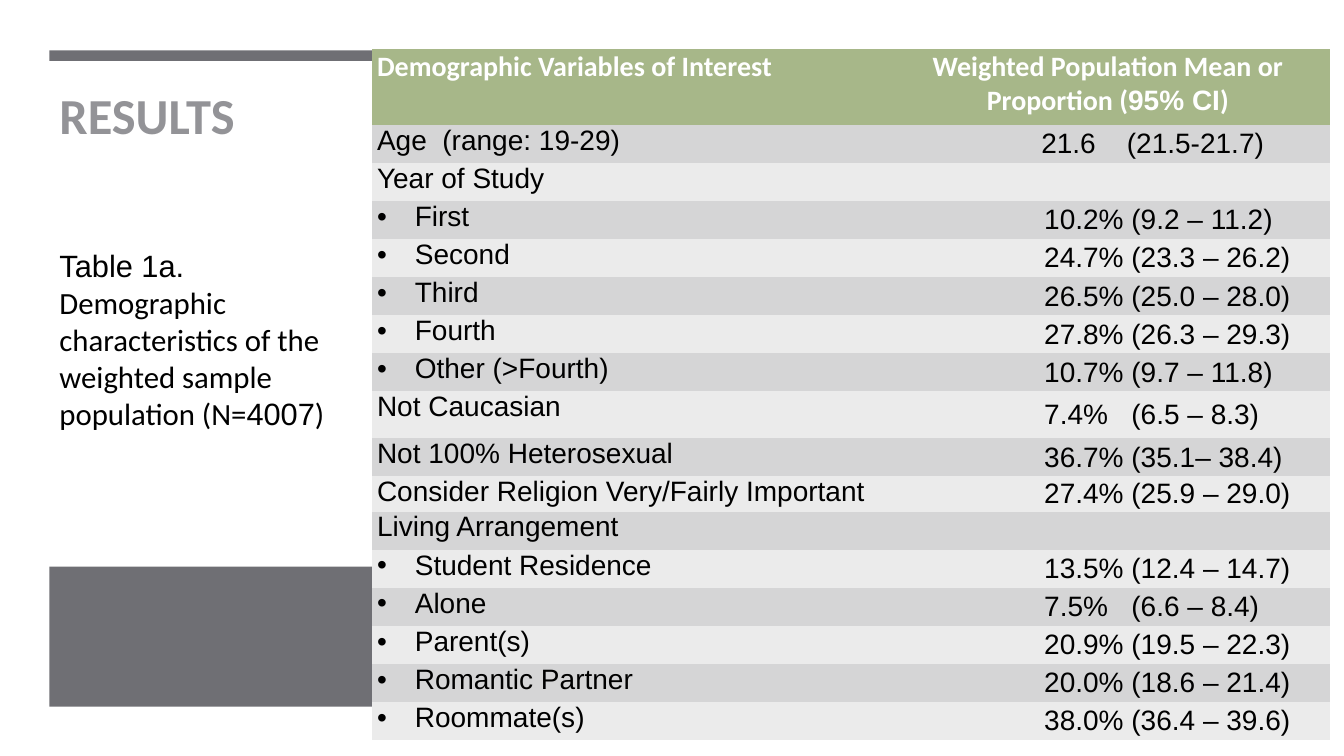
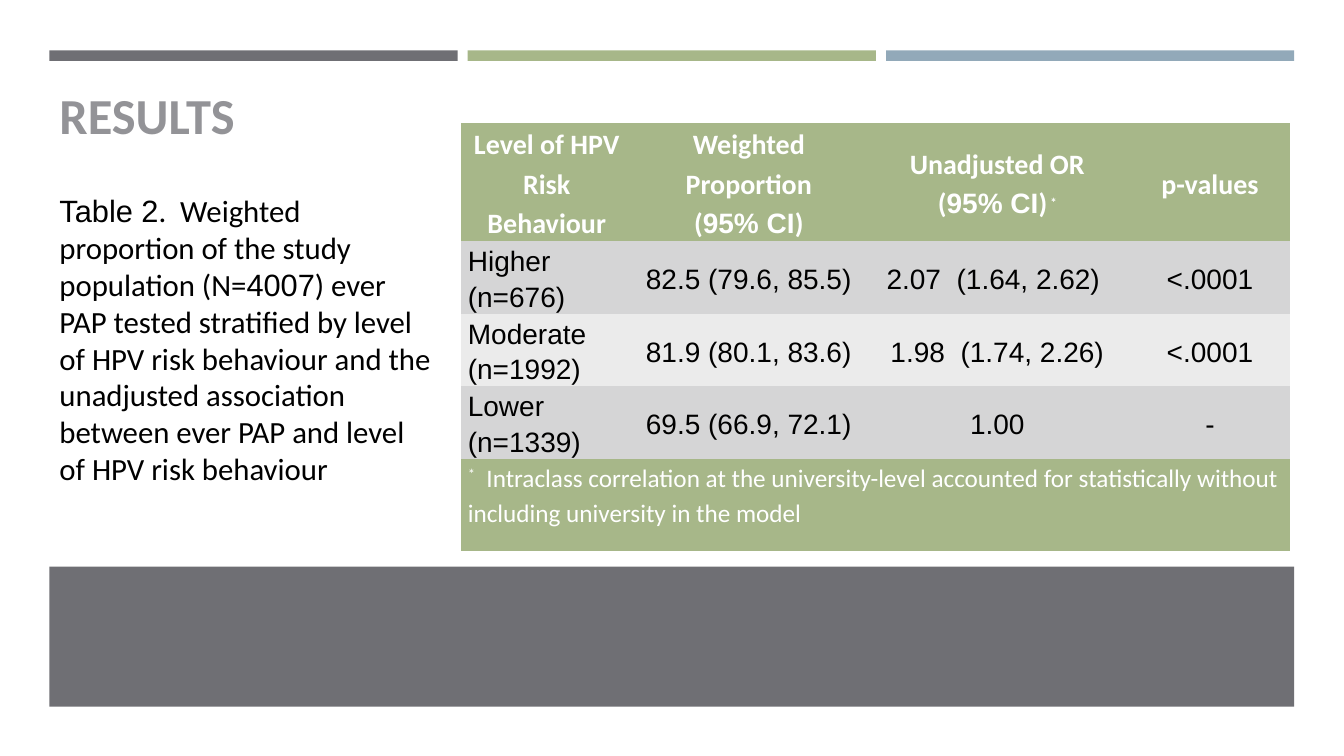
from itertools import cycle

from lxml.etree import SubElement
from pptx import Presentation
from pptx.dml.color import RGBColor
from pptx.enum.shapes import MSO_SHAPE
from pptx.enum.text import MSO_ANCHOR, MSO_AUTO_SIZE, PP_ALIGN
from pptx.oxml.ns import qn
from pptx.util import Pt

COLORS = {
    "grey": "6F6F74", "green": "A7B789", "blue": "92A9B9", "title": "939397",
    "white": "FFFFFF", "black": "000000", "dark_row": "D5D5D6", "light_row": "EBEBEB",
}
SANS, PLAIN = "Calibri", "Arial"
NO_GRID = "{2D5ABB26-0587-4C30-8999-92F81FD0307C}"
LEFT, BAND_TOP, BAND_W, BAND_STEP, BAND_H = 35.3, 36, 291.6, 298.8, 7.5


def write(p, text, size=20, font=PLAIN, color="black", bold=False, raised=False):
    """Append text to a paragraph, swapping between the two fonts at each bar."""
    fonts = cycle((font, SANS if font == PLAIN else PLAIN))
    for part, name in zip(text.split("|"), fonts):
        r = p.add_run()
        r.text = part
        r.font.size, r.font.name, r.font.bold = Pt(size), name, bold
        r.font.color.rgb = RGBColor.from_string(COLORS[color])
        if raised:
            r.font._element.set("baseline", "30000")


class Deck:
    """Hold the presentation, its shared style and the current slide."""

    def __init__(self):
        """Set the page size and prepare the shared layout."""
        self.prs = Presentation()
        self.prs.slide_width, self.prs.slide_height = Pt(960), Pt(540)
        self.layout = self.prs.slide_layouts[7]
        self.slide = None

    def add_slide(self):
        """Start a slide that keeps only the title and text placeholders."""
        first = self.slide is None
        self.slide = self.prs.slides.add_slide(self.layout)
        unused = self.slide.placeholders[1]._element
        unused.getparent().remove(unused)
        if first:
            for i, name in enumerate(("grey", "green", "blue")):
                self.layout_band(i, LEFT + i * BAND_STEP, BAND_TOP, BAND_W, BAND_H, name)
            self.layout_band(3, LEFT, 404.8, 2 * BAND_STEP + BAND_W, 100, "grey")

    def layout_band(self, index, x, y, w, h, color):
        """Draw a plain rectangle and move it to the back of the layout."""
        sp = self.slide.shapes.add_shape(MSO_SHAPE.RECTANGLE, Pt(x), Pt(y), Pt(w), Pt(h))
        sp.shadow.inherit = False
        sp.fill.solid()
        sp.fill.fore_color.rgb = RGBColor.from_string(COLORS[color])
        sp.line.fill.background()
        sp._element.nvSpPr.cNvPr.set("id", str(100 + index))
        self.layout.shapes._spTree.insert(2 + index, sp._element)

    def placeholder(self, sp, text, y, w, h, **fmt):
        """Move a placeholder, fill it and return its text frame and paragraph."""
        sp.left, sp.top, sp.width, sp.height = Pt(LEFT), Pt(y), Pt(w), Pt(h)
        tf = sp.text_frame
        tf.auto_size, tf.vertical_anchor = MSO_AUTO_SIZE.NONE, MSO_ANCHOR.MIDDLE
        write(tf.paragraphs[0], text, **fmt)
        return tf, tf.paragraphs[0]

    def title(self, text, width):
        """Write the slide title."""
        self.placeholder(self.slide.shapes.title, text, 49, width, 65,
                         size=36, font=SANS, color="title", bold=True)

    def caption(self, text, width):
        """Write the table caption in the text placeholder."""
        tf, p = self.placeholder(self.slide.placeholders[2], text, 103, width, 300, size=22)
        tf.margin_bottom = Pt(25)
        p.space_after = Pt(6)

    def table(self, x, y, widths, heights):
        """Add an unstyled table with the given column widths and row heights."""
        frame = self.slide.shapes.add_table(len(heights), len(widths), Pt(x), Pt(y),
                                            Pt(sum(widths)), Pt(sum(heights)))
        tbl = frame.table
        tbl._tbl.tblPr.find(qn("a:tableStyleId")).text = NO_GRID
        for col, w in zip(tbl.columns, widths):
            col.width = Pt(w)
        for row, h in zip(tbl.rows, heights):
            row.height = Pt(h)
        return tbl

    def cell(self, cell, text, fill, inset, anchor=MSO_ANCHOR.MIDDLE, align=PP_ALIGN.LEFT,
             spacing=None, around=None, indent=0, bullet=False, **fmt):
        """Fill a table cell and return its last paragraph."""
        cell.fill.solid()
        cell.fill.fore_color.rgb = RGBColor.from_string(COLORS[fill])
        cell.margin_left = cell.margin_right = Pt(inset)
        cell.margin_top = cell.margin_bottom = 0
        cell.vertical_anchor = anchor
        tf = cell.text_frame
        for i, line in enumerate(text.split("\n")):
            p = tf.add_paragraph() if i else tf.paragraphs[0]
            p.alignment = align
            if spacing:
                p.line_spacing = spacing
            if around:
                p.space_before = p.space_after = Pt(around)
            pPr = p._p.get_or_add_pPr()
            pPr.set("marL", str(Pt(indent)))
            pPr.set("indent", str(-Pt(indent) if bullet else 0))
            if bullet:
                SubElement(pPr, qn("a:buFont")).set("typeface", PLAIN)
                SubElement(pPr, qn("a:buChar")).set("char", "•")
            if line:
                write(p, line, **fmt)
        return p


HEADER = dict(fill="green", font=SANS, color="white", bold=True)
ROW_FILLS = ("dark_row", "light_row")

DEMOGRAPHICS = (
    ("Age  (range: 19-29)", "21.6    (21.5-21.7)"),
    ("Year of Study", ""),
    ("• First", "10.2% (9.2 – 11.2)"),
    ("• Second", "24.7% (23.3 – 26.2)"),
    ("• Third", "26.5% (25.0 – 28.0)"),
    ("• Fourth", "27.8% (26.3 – 29.3)"),
    ("• Other (>Fourth)", "10.7% (9.7 – 11.8)"),
    ("Not Caucasian", "7.4%   (6.5 – 8.3)"),
    ("Not 100% Heterosexual", "36.7% (35.1– 38.4)"),
    ("Consider Religion Very/Fairly Important", "27.4% (25.9 – 29.0)"),
    ("Living Arrangement", ""),
    ("• Student Residence", "13.5% (12.4 – 14.7)"),
    ("• Alone", "7.5%   (6.6 – 8.4)"),
    ("• Parent(s)", "20.9% (19.5 – 22.3)"),
    ("• Romantic Partner", "20.0% (18.6 – 21.4)"),
    ("• Roommate(s)", "38.0% (36.4 – 39.6)"),
)

RISK_HEADINGS = ("Level of HPV Risk Behaviour", "Weighted Proportion\n(|95% CI|)",
                 "Unadjusted OR\n(|95% CI|)", "p-values")
RISK_LEVELS = (
    ("Higher\n(n=676)", "82.5 (79.6, 85.5)", "2.07  (1.64, 2.62) ", "<.0001"),
    ("Moderate (n=1992)", "81.9 (80.1, 83.6)", "1.98  (1.74, 2.26)", "<.0001"),
    ("Lower (n=1339)", "69.5 (66.9, 72.1)", "1.00", "-"),
)


def demographics_slide(deck):
    """Build the slide with the demographic table."""
    deck.add_slide()
    deck.title("RESULTS", 219.6)
    deck.caption("Table 1a. |Demographic characteristics of the weighted sample "
                 "population (N=|4007|)", 219.6)
    heights = [54] + [27.2] * len(DEMOGRAPHICS)
    heights[8], heights[10] = 33.5, 25.2
    tbl = deck.table(265.7, 35.3, (367.2, 316.8), heights)
    top = dict(inset=3.6, anchor=MSO_ANCHOR.TOP)
    deck.cell(tbl.cell(0, 0), "Demographic Variables of Interest", **top, **HEADER)
    deck.cell(tbl.cell(0, 1), "Weighted Population Mean or Proportion (|95% CI|)",
              align=PP_ALIGN.CENTER, **top, **HEADER)
    for i, (label, value) in enumerate(DEMOGRAPHICS):
        fill, bullet = ROW_FILLS[i % 2], label.startswith("•")
        deck.cell(tbl.cell(i + 1, 0), label.removeprefix("• "), fill,
                  indent=27 if bullet else 0, bullet=bullet, **top)
        deck.cell(tbl.cell(i + 1, 1), value, fill, 3.6, around=2.4 if value else None,
                  indent=109.4 if i else 107.3)


def risk_slide(deck):
    """Build the slide with the risk behaviour table."""
    deck.add_slide()
    deck.title("RESULTS", 268.6)
    deck.caption("Table 2|.  Weighted proportion of the study population (N=|4007|) ever PAP "
                 "tested stratified by level of HPV risk behaviour and the unadjusted "
                 "association between ever PAP and level of HPV risk behaviour", 281.5)
    tbl = deck.table(329, 87.8, (123.1, 165.6, 189.4, 114.5), (78.5, 51.8, 51.8, 51.8, 66.2))
    shared = dict(inset=5.2, spacing=1.15)
    for c, heading in enumerate(RISK_HEADINGS):
        p = deck.cell(tbl.cell(0, c), heading, align=PP_ALIGN.CENTER, **shared, **HEADER)
        if c == 2:
            write(p, " *", size=16, font=SANS, color="white", bold=True, raised=True)
    for i, level in enumerate(RISK_LEVELS):
        for c, text in enumerate(level):
            deck.cell(tbl.cell(i + 1, c), text, ROW_FILLS[i % 2],
                      align=PP_ALIGN.CENTER if c else PP_ALIGN.LEFT, **shared)
    note = tbl.cell(4, 0)
    note.merge(tbl.cell(4, 3))
    fmt = dict(size=18, font=SANS, color="white")
    p = deck.cell(note, "*", "green", anchor=MSO_ANCHOR.TOP, raised=True, **shared, **fmt)
    write(p, "  Intraclass correlation at the university-level accounted for statistically "
             "without including university in the model", **fmt)


def main():
    """Build both slides and save the presentation."""
    deck = Deck()
    demographics_slide(deck)
    risk_slide(deck)
    deck.prs.save("out.pptx")


if __name__ == "__main__":
    main()
